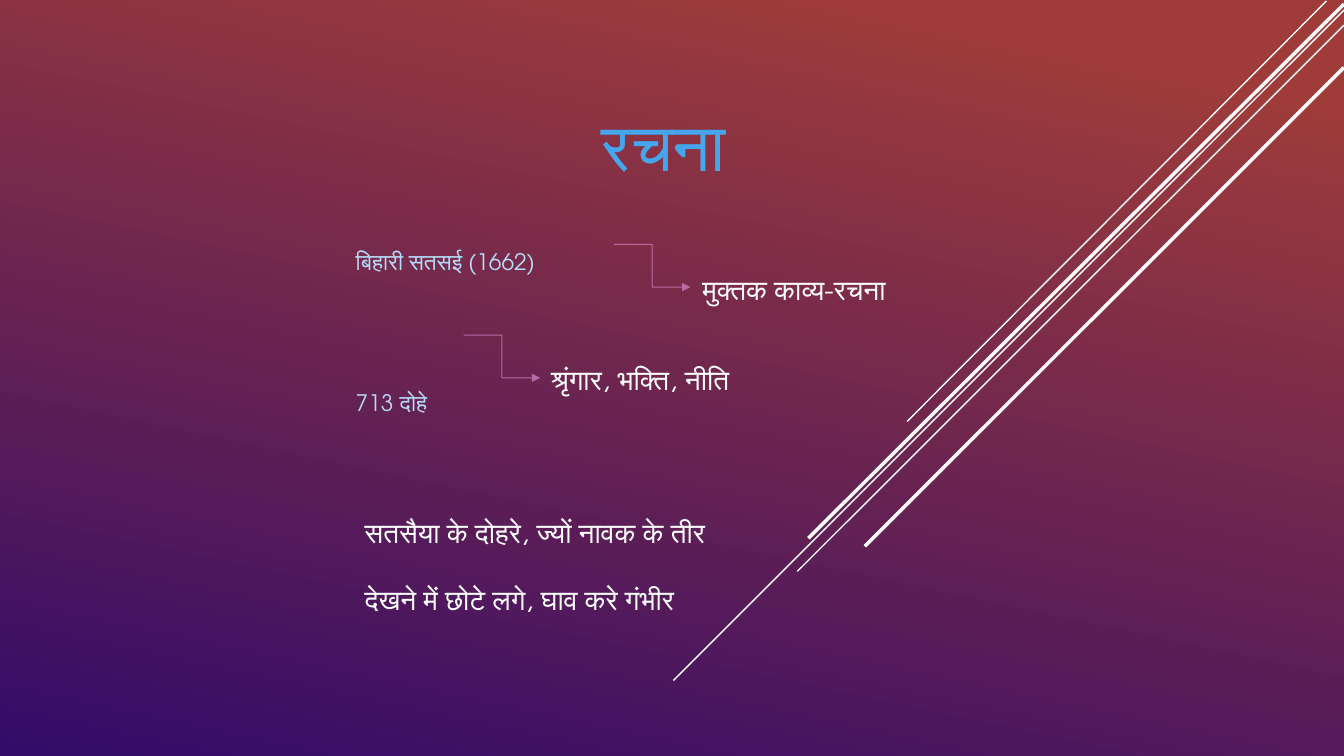
from lxml.etree import SubElement as Sub
from pptx import Presentation
from pptx.dml.color import RGBColor as RGB
from pptx.enum.shapes import MSO_CONNECTOR as Link
from pptx.enum.text import MSO_ANCHOR as Anchor, MSO_AUTO_SIZE as Fit, PP_ALIGN as Align
from pptx.oxml.ns import qn
from pptx.util import Pt

FACE = "TeX Gyre Adventor"
WHITE = RGB(0xFF, 0xFF, 0xFF)
BLUE = RGB(0x45, 0xA5, 0xED)
PALE = RGB(0xB5, 0xDB, 0xF8)
PINK = RGB(0xE4, 0x98, 0xE1)
RUST = RGB(0x9F, 0x3C, 0x3A)
NAVY = RGB(0x33, 0x0B, 0x69)

RAYS = [
    (947.5, 0.7, 648, 301, 1),
    (960, 7.2, 481, 486, 1),
    (960, 18, 569.5, 408.2, 1),
    (960, 2.9, 577.4, 384.5, 2.5),
    (960, 48.2, 617.8, 390.2, 2.5),
]
NOTES = [
    ("मुक्तक काव्य-रचना", 494.6, 190.8, 190.1, 438.5),
    ("श्रृंगार, भक्ति, नीति", 386.6, 255.6, 207.4, 331.2),
]
VERSE = ["सतसैया के दोहरे, ज्यों नावक के तीर", "देखने में छोटे लगे, घाव करे गंभीर"]
WORKS = ["बिहारी सतसई (1662)", "713 दोहे"]


def set_all(item, form):
    for key, value in form.items():
        setattr(item, key, value)


def paint(slide):
    fill = slide.background.fill
    fill.gradient()
    fill.gradient_angle = 258
    for stop, color, place in zip(fill.gradient_stops, (RUST, NAVY), (0.1, 1)):
        stop.color.rgb = color
        stop.position = place


def draw(slide, kind, ends, color, width):
    line = slide.shapes.add_connector(kind, *map(Pt, ends))
    line.line.color.rgb = color
    line.line.width = Pt(width)
    Sub(line._element.spPr, qn("a:effectLst"))
    return line


def elbow(slide, left, top):
    ends = (left, top, left + 54.7, top + 30.5)
    line = draw(slide, Link.ELBOW, ends, PINK, 0.75).line
    tint = line._ln.find(".//" + qn("a:srgbClr"))
    Sub(tint, qn("a:alpha"), val="60000")
    Sub(line._ln, qn("a:tailEnd"), type="triangle")


def write(frame, texts, size, color, gap=0, after=0, base=None, align=Align.LEFT):
    for num, text in enumerate(texts):
        para = frame.add_paragraph() if num else frame.paragraphs[0]
        form = {"alignment": align, "space_before": Pt(gap if num else 0),
                "space_after": Pt(after)}
        set_all(para, form)
        run = para.add_run()
        run.text = text
        set_all(run.font, {"name": FACE, "size": Pt(size)})
        run.font.color.rgb = color
        if base:
            run._r.get_or_add_rPr().set("baseline", str(base))


def add_box(slide, area, texts, size, color, **form):
    frame = slide.shapes.add_textbox(*map(Pt, area)).text_frame
    frame.word_wrap = True
    write(frame, texts, size, color, **form)


def add_title(slide, text):
    title = slide.shapes.title
    set_all(title, {"left": Pt(268.6), "top": Pt(49.7),
                    "width": Pt(423.4), "height": Pt(86.4)})
    frame = title.text_frame
    set_all(frame, {"vertical_anchor": Anchor.BOTTOM, "auto_size": Fit.NONE})
    write(frame, [text], 48, BLUE, align=Align.CENTER)


def main():
    deck = Presentation()
    set_all(deck, {"slide_width": Pt(960), "slide_height": Pt(540)})
    slide = deck.slides.add_slide(deck.slide_layouts[5])
    paint(slide)
    for *ends, width in RAYS:
        draw(slide, Link.STRAIGHT, ends, WHITE, width)
    add_title(slide, "रचना ")
    add_box(slide, (247, 154.8, 658, 189.4), WORKS, 28, PALE,
            gap=56, after=6, base=-25000)
    for text, left, top, width, start in NOTES:
        elbow(slide, start, top - 16.2)
        add_box(slide, (left, top, width, 31.7), [text], 20, WHITE)
    add_box(slide, (253.4, 364.3, 340.6, 79.9), VERSE, 20, WHITE, gap=24.3)
    deck.save("out.pptx")


if __name__ == "__main__":
    main()
